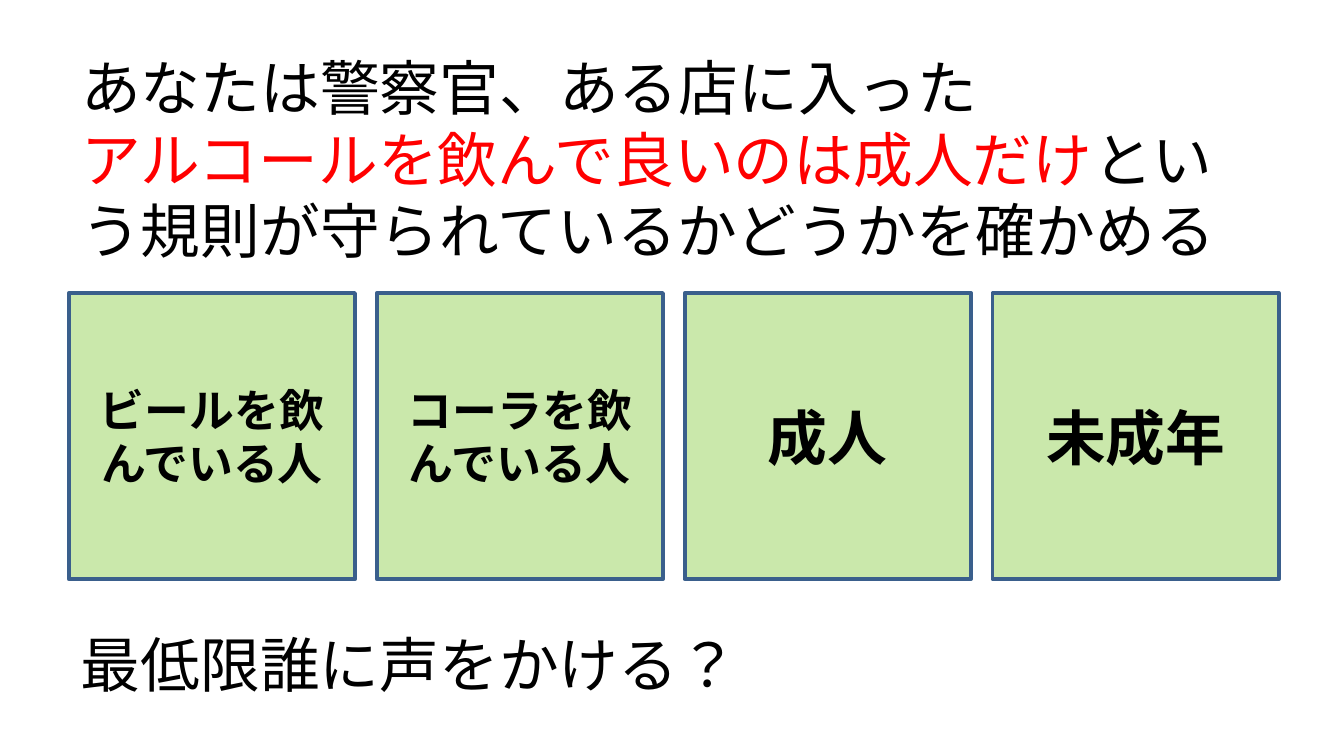
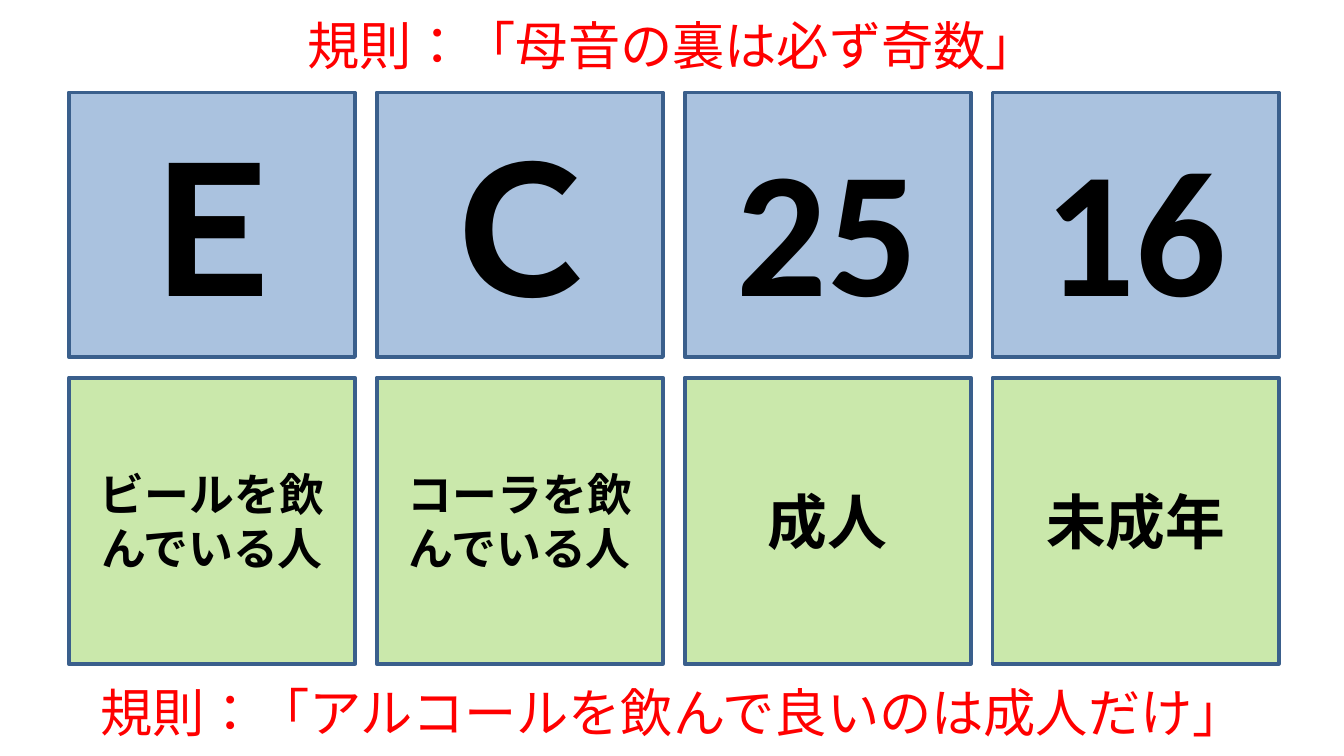
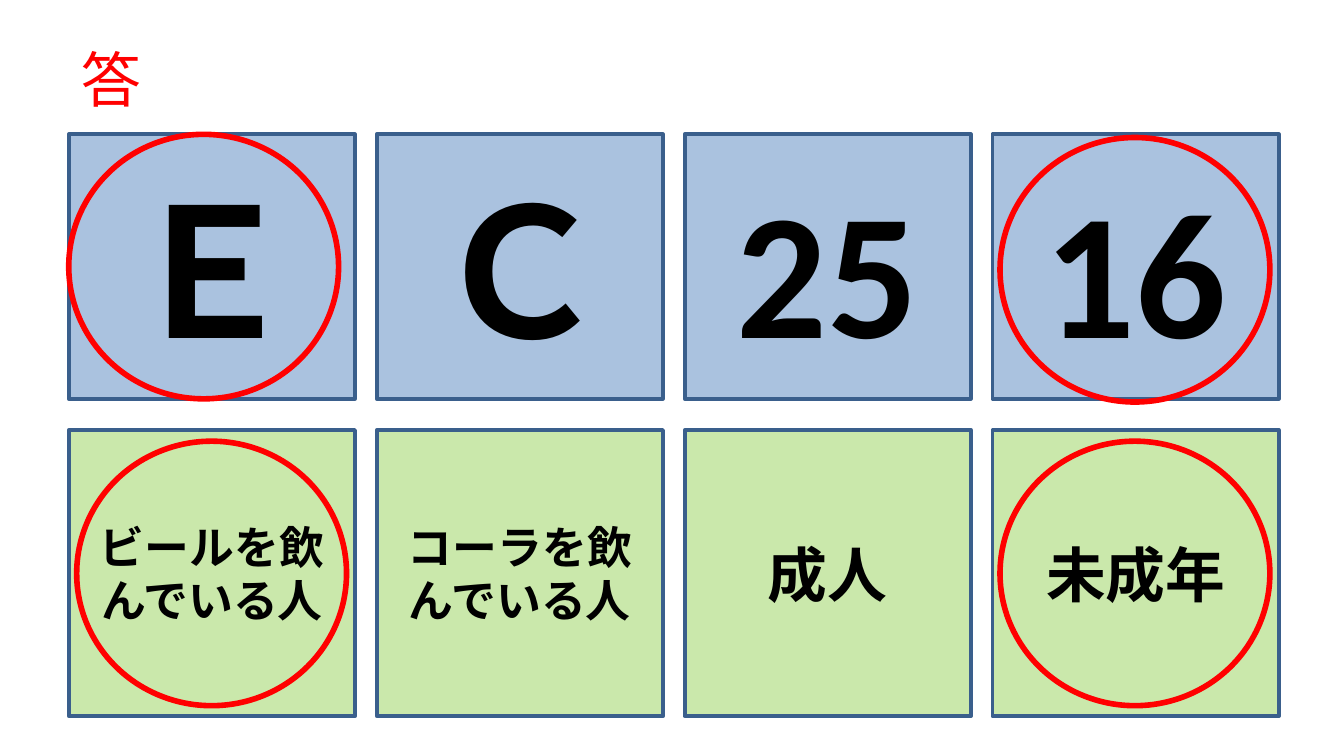
from lxml import etree
from pptx import Presentation
from pptx.dml.color import RGBColor
from pptx.enum.lang import MSO_LANGUAGE_ID
from pptx.enum.shapes import MSO_SHAPE
from pptx.enum.text import MSO_ANCHOR, MSO_AUTO_SIZE, PP_ALIGN
from pptx.oxml.ns import qn
from pptx.util import Cm, Pt

RECTANGLE, OVAL = MSO_SHAPE.RECTANGLE, MSO_SHAPE.OVAL
LEFT, CENTER = PP_ALIGN.LEFT, PP_ALIGN.CENTER
TOP, MIDDLE = MSO_ANCHOR.TOP, MSO_ANCHOR.MIDDLE
NO_AUTOFIT = MSO_AUTO_SIZE.NONE
JAPANESE = MSO_LANGUAGE_ID.JAPANESE

FONT = "Calibri"
BLACK, RED = "000000", "FF0000"
BLUE, GREEN, BORDER = "4F81BD", "92D050", "3A5F8C"
CARD_OPACITY = 48

TITLE_ONLY = 5
CARD_LEFT, CARD_PITCH, CARD_WIDTH = 1.3, 5.82, 5.41
LETTER_HEIGHT, PERSON_HEIGHT = 5, 5.41
RING_WIDTH, RING_HEIGHT = 5.1, 5
TEXT_LEFT, TEXT_WIDTH, LINE_HEIGHT = 1.28, 22.86, 1.78

LETTERS = [("Ｅ", 96), ("Ｃ", 96), ("25", 96), ("16", 96)]
PEOPLE = [("ビールを飲んでいる人", 24), ("コーラを飲んでいる人", 24), ("成人", 32), ("未成年", 32)]


def color(value):
    return RGBColor.from_string(value)


def apply(target, values):
    for name, value in values.items():
        setattr(target, name, value)


class Deck:
    def __init__(self):
        self.presentation = Presentation()
        apply(self.presentation, {"slide_width": Cm(25.4), "slide_height": Cm(14.29)})
        self.slide = None

    def add_slide(self):
        layout = self.presentation.slide_layouts[TITLE_ONLY]
        self.slide = self.presentation.slides.add_slide(layout)

    def fill_text(self, shape, lines, size, align, anchor, bold=False):
        frame = shape.text_frame
        apply(frame, {"word_wrap": True, "auto_size": NO_AUTOFIT, "vertical_anchor": anchor})
        paragraph = frame.paragraphs[0]
        paragraph.alignment = align
        for index, line in enumerate(lines):
            if index:
                paragraph.add_line_break()
            for text, text_color in line:
                run = paragraph.add_run()
                run.text = text
                apply(run.font, {"name": FONT, "size": Pt(size), "bold": bold, "language_id": JAPANESE})
                run.font.color.rgb = color(text_color)

    def title(self, lines, top, height=LINE_HEIGHT, size=32, align=LEFT):
        title = self.slide.shapes.title
        apply(title, {"left": Cm(TEXT_LEFT), "top": Cm(top), "width": Cm(TEXT_WIDTH), "height": Cm(height)})
        self.fill_text(title, lines, size, align, MIDDLE)

    def text(self, text, text_color, top, size, align, anchor):
        box = self.slide.shapes.add_textbox(Cm(TEXT_LEFT), Cm(top), Cm(TEXT_WIDTH), Cm(LINE_HEIGHT))
        self.fill_text(box, [[(text, text_color)]], size, align, anchor)

    def outline(self, kind, left, top, width, height, line_color, line_width):
        shape = self.slide.shapes.add_shape(kind, Cm(left), Cm(top), Cm(width), Cm(height))
        shape.shadow.inherit = False
        shape.fill.background()
        shape.line.color.rgb = color(line_color)
        shape.line.width = Pt(line_width)
        return shape

    def cards(self, labels, top, height, fill):
        for column, (label, size) in enumerate(labels):
            left = CARD_LEFT + column * CARD_PITCH
            card = self.outline(RECTANGLE, left, top, CARD_WIDTH, height, BORDER, 2)
            card.fill.solid()
            card.fill.fore_color.rgb = color(fill)
            fill_color = card._element.spPr.find(qn("a:solidFill"))[0]
            etree.SubElement(fill_color, qn("a:alpha")).set("val", str(CARD_OPACITY * 1000))
            self.fill_text(card, [[(label, BLACK)]], size, CENTER, MIDDLE, bold=True)

    def letter_cards(self, top):
        self.cards(LETTERS, top, LETTER_HEIGHT, BLUE)

    def person_cards(self, top):
        self.cards(PEOPLE, top, PERSON_HEIGHT, GREEN)

    def ring(self, left, top):
        self.outline(OVAL, left, top, RING_WIDTH, RING_HEIGHT, RED, 3)


def main():
    deck = Deck()

    deck.add_slide()
    deck.title(
        [
            [("あなたは警察官、ある店に入った", BLACK)],
            [
                ("アルコールを飲んで良いのは成人だけ", RED),
                ("という規則が守られているかどうかを確かめる", BLACK),
            ],
        ],
        top=0.6,
        height=4.78,
    )
    deck.person_cards(5.54)
    deck.text("最低限誰に声をかける？", BLACK, 11.74, 32, LEFT, TOP)

    deck.add_slide()
    deck.title([[("規則：「母音の裏は必ず奇数」", RED)]], top=-0.05, size=28, align=CENTER)
    deck.letter_cards(1.75)
    deck.person_cards(7.14)
    deck.text("規則：「アルコールを飲んで良いのは成人だけ」", RED, 12.57, 28, CENTER, MIDDLE)

    deck.add_slide()
    deck.title([[("答", RED)]], top=0.6)
    deck.letter_cards(2.54)
    deck.person_cards(8.13)
    for left, top in [(1.3, 2.54), (18.9, 2.6), (1.45, 8.34), (18.9, 8.34)]:
        deck.ring(left, top)

    deck.presentation.save("out.pptx")


if __name__ == "__main__":
    main()
